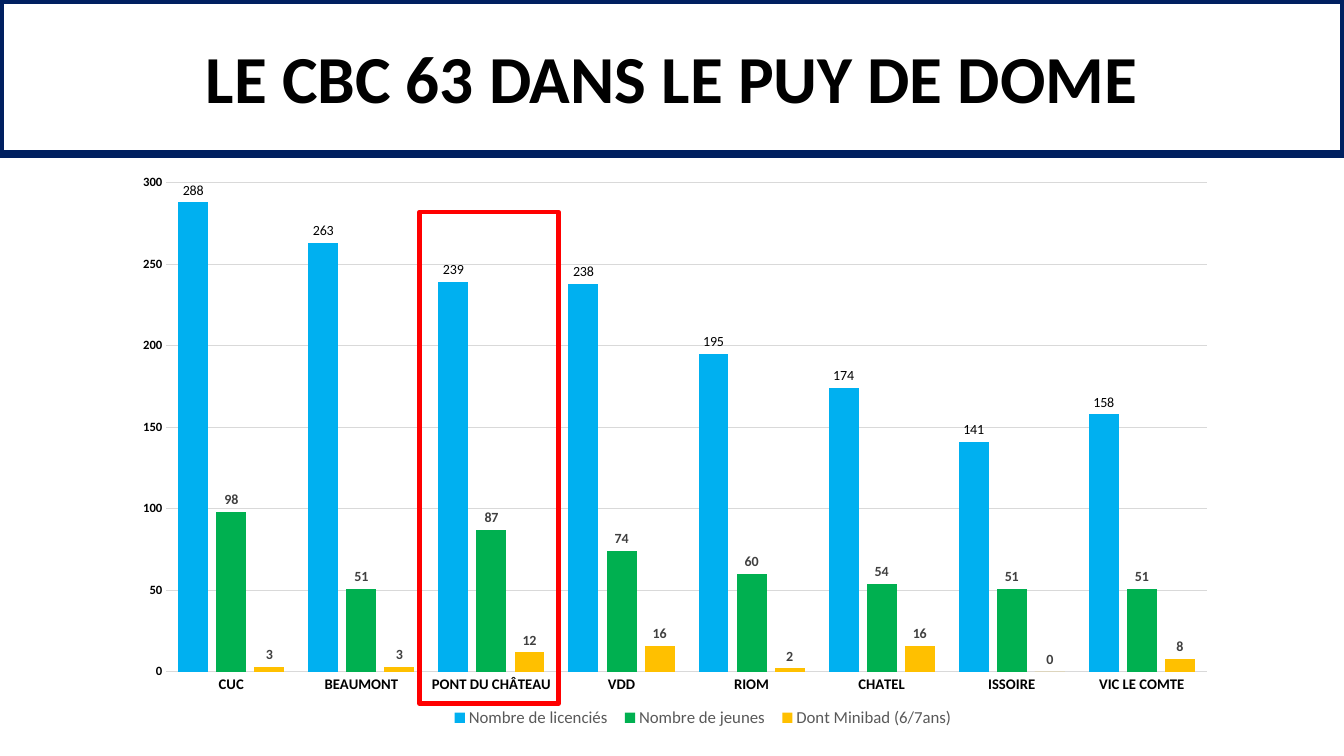
import pptx
import pptx.chart.data
import pptx.dml.color
import pptx.enum.chart
import pptx.enum.shapes
import pptx.enum.text
import pptx.oxml
import pptx.oxml.ns
import pptx.util
from pptx.util import Inches

FACE = "Calibri"
HUES = {
    "white": "FFFFFF", "black": "000000", "navy": "002060", "red": "FF0000",
    "blue": "00B0F0", "green": "00B050", "gold": "FFC000",
    "grid": "D9D9D9", "gray": "595959", "dark": "404040",
}
CLUBS = ["CUC", "BEAUMONT", "PONT DU CHÂTEAU", "VDD",
         "RIOM", "CHATEL", "ISSOIRE", "VIC LE COMTE"]
COUNTS = [
    ("Nombre de licenciés", [288, 263, 239, 238, 195, 174, 141, 158], "blue", "black", False),
    ("Nombre de jeunes", [98, 51, 87, 74, 60, 54, 51, 51], "green", "dark", True),
    ("Dont Minibad (6/7ans)", [3, 3, 12, 16, 2, 16, 0, 8], "gold", "dark", True),
]


def tint(name):
    """Return the named colour."""
    return pptx.dml.color.RGBColor.from_string(HUES[name])


def style(font, size, hue, bold=False):
    """Set face, size, colour and weight of a font."""
    font.name = FACE
    font.size = pptx.util.Pt(size)
    font.color.rgb = tint(hue)
    font.bold = bold


def stroke(line, hue, width):
    """Give a line its colour and width."""
    line.color.rgb = tint(hue)
    line.width = pptx.util.Pt(width)


def add_box(slide, left, top, width, height, hue, weight, fill=None):
    """Add an outlined rectangle, hollow unless a fill is named."""
    box = slide.shapes.add_shape(
        pptx.enum.shapes.MSO_SHAPE.RECTANGLE,
        Inches(left), Inches(top), Inches(width), Inches(height))
    box.shadow.inherit = False
    if fill:
        box.fill.solid()
        box.fill.fore_color.rgb = tint(fill)
    else:
        box.fill.background()
    stroke(box.line, hue, weight)
    return box


def add_title(slide, text):
    """Add the framed title band."""
    band = add_box(slide, 0, 0, 13.33, 1.53, "navy", 6, "white")
    frame = band.text_frame
    frame.word_wrap = True
    frame.vertical_anchor = pptx.enum.text.MSO_ANCHOR.MIDDLE
    para = frame.paragraphs[0]
    para.alignment = pptx.enum.text.PP_ALIGN.CENTER
    run = para.add_run()
    run.text = text
    style(run.font, 48, "black", True)


def place(parent, index, left, top, width, height, inner=False):
    """Fix a chart part at fractions of the chart area."""
    for old in parent.findall(pptx.oxml.ns.qn("c:layout")):
        parent.remove(old)
    target = '<c:layoutTarget val="inner"/>' if inner else ""
    sizes = zip("xywh", (left, top, width, height))
    parts = "".join(f'<c:{key} val="{size}"/>' for key, size in sizes)
    parent.insert(index, pptx.oxml.parse_xml(
        f'<c:layout {pptx.oxml.ns.nsdecls("c")}><c:manualLayout>{target}'
        f'<c:xMode val="edge"/><c:yMode val="edge"/>{parts}'
        '</c:manualLayout></c:layout>'))


def style_axes(chart):
    """Format both axes and the grid."""
    none = pptx.enum.chart.XL_TICK_MARK.NONE
    for axis, size in ((chart.category_axis, 10.5), (chart.value_axis, 9)):
        axis.major_tick_mark = axis.minor_tick_mark = none
        style(axis.tick_labels.font, size, "black", True)
    stroke(chart.category_axis.format.line, "grid", 0.75)
    scale = chart.value_axis
    scale.minimum_scale, scale.maximum_scale, scale.major_unit = 0, 300, 50
    scale.format.line.fill.background()
    stroke(scale.major_gridlines.format.line, "grid", 0.75)


def style_bars(plot):
    """Colour the bars and show their values."""
    plot.gap_width, plot.overlap = 80, -27
    plot.vary_by_categories = False
    for bars, (_, _, hue, ink, bold) in zip(plot.series, COUNTS):
        bars.format.fill.solid()
        bars.format.fill.fore_color.rgb = tint(hue)
        bars.invert_if_negative = False
        labels = bars.data_labels
        labels.show_value = True
        labels.position = pptx.enum.chart.XL_LABEL_POSITION.OUTSIDE_END
        style(labels.font, 10, ink, bold)


def add_bars(slide):
    """Add the clustered columns of club members."""
    data = pptx.chart.data.CategoryChartData()
    data.categories = CLUBS
    for name, values, *_ in COUNTS:
        data.add_series(name, values)
    chart = slide.shapes.add_chart(
        pptx.enum.chart.XL_CHART_TYPE.COLUMN_CLUSTERED,
        Inches(1.21), Inches(1.64), Inches(10.98), Inches(5.71), data).chart
    chart.has_title = False
    style(chart.font, 10, "black")
    style_axes(chart)
    style_bars(chart.plots[0])
    chart.has_legend = True
    chart.legend.position = pptx.enum.chart.XL_LEGEND_POSITION.BOTTOM
    chart.legend.include_in_layout = False
    style(chart.legend.font, 12, "gray")
    place(chart.element.xpath(".//c:plotArea")[0], 0, 0.04, 0.03, 0.94, 0.85, True)
    place(chart.element.xpath(".//c:legend")[0], 1, 0.29, 0.93, 0.47, 0.06)


def main():
    """Build and save the slide."""
    deck = pptx.Presentation()
    deck.slide_width, deck.slide_height = Inches(13.33), Inches(7.5)
    slide = deck.slides.add_slide(deck.slide_layouts[6])
    add_title(slide, "LE CBC 63 DANS LE PUY DE DOME")
    add_bars(slide)
    add_box(slide, 4.16, 2.1, 1.38, 4.88, "red", 3)
    deck.save("out.pptx")


if __name__ == "__main__":
    main()
